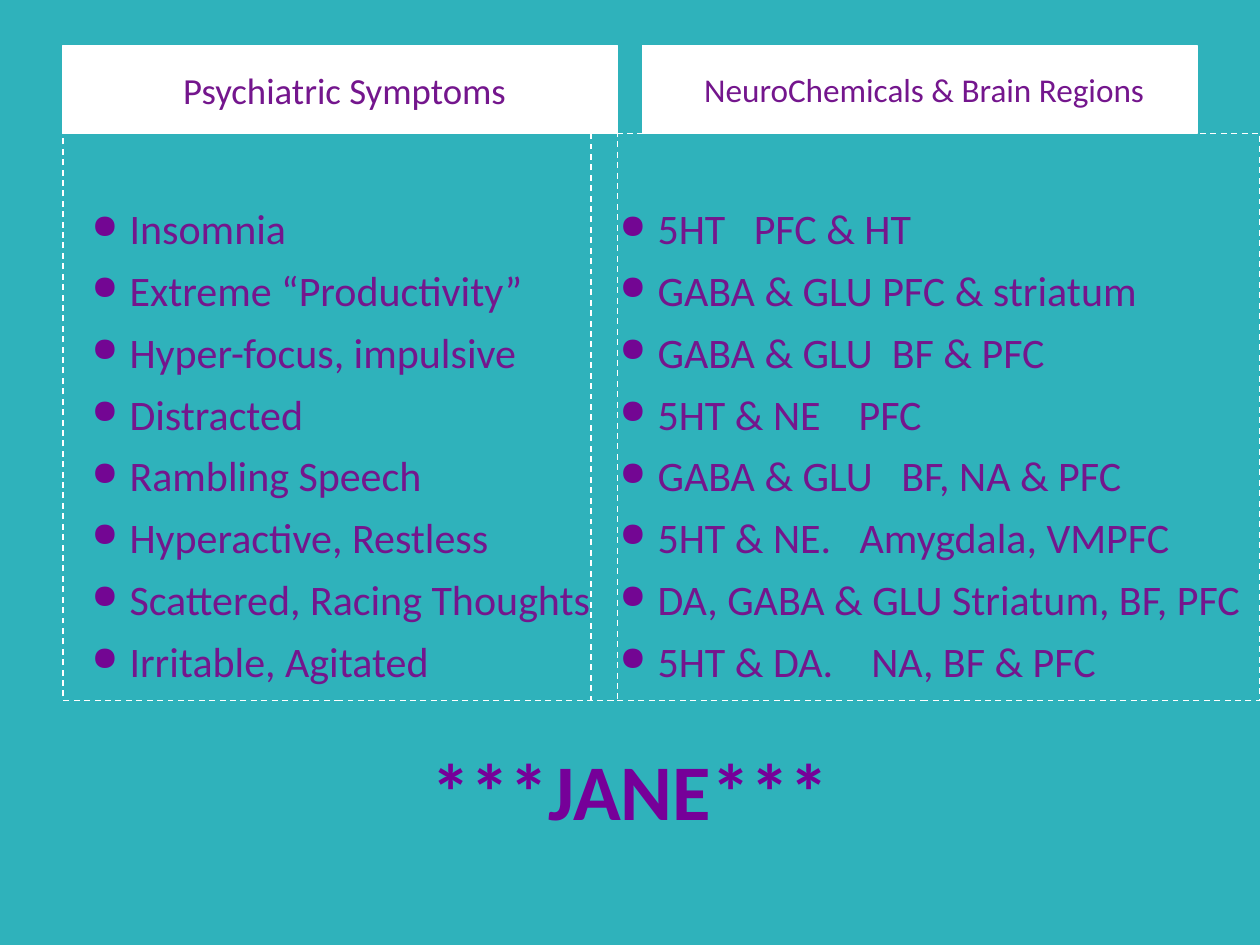
from typing import NamedTuple

import pptx
import pptx.dml.color
import pptx.enum.dml
import pptx.enum.shapes
import pptx.enum.text
import pptx.oxml
import pptx.oxml.ns
import pptx.util
from pptx.util import Inches

RGBColor = pptx.dml.color.RGBColor
Align = pptx.enum.text.PP_ALIGN
Anchor = pptx.enum.text.MSO_ANCHOR

TEAL = RGBColor(0x2F, 0xB2, 0xBB)
WHITE = RGBColor(0xFF, 0xFF, 0xFF)
PURPLE = RGBColor(0x74, 0x16, 0x8D)
TITLE_PURPLE = RGBColor(0x76, 0x00, 0x99)
BULLET_PURPLE = RGBColor(0x73, 0x06, 0x93)

FONT = "Calibri"
SPACE_WIDTH = 5.4  # one blank at 24 points
HEADING_TOP, HEADING_WIDTH, HEADING_HEIGHT = 0.36, 4.4, 0.7
LIST_TOP, LIST_HEIGHT = HEADING_TOP + HEADING_HEIGHT, 4.5


class Entry(NamedTuple):
    lead: str
    regions: str = ""
    gap: int = 1  # distance before the regions, in blanks


class Column(NamedTuple):
    heading: str
    heading_size: int
    heading_left: float
    list_left: float
    list_width: float
    entries: list[Entry]


COLUMNS = [
    Column("Psychiatric Symptoms", 21, 0.5, 0.5, 4.4, [
        Entry("Insomnia"),
        Entry("Extreme “Productivity”"),
        Entry("Hyper-focus, impulsive"),
        Entry("Distracted"),
        Entry("Rambling Speech"),
        Entry("Hyperactive, Restless"),
        Entry("Scattered, Racing Thoughts"),
        Entry("Irritable, Agitated"),
    ]),
    Column("NeuroChemicals & Brain Regions", 19, 5.1, 4.69, 5.31, [
        Entry("5HT", "PFC & HT", 3),
        Entry("GABA & GLU", "PFC & striatum"),
        Entry("GABA & GLU", "BF & PFC", 2),
        Entry("5HT & NE", "PFC", 4),
        Entry("GABA & GLU", "BF, NA & PFC", 3),
        Entry("5HT & NE.", "Amygdala, VMPFC", 3),
        Entry("DA, GABA & GLU", "Striatum, BF, PFC"),
        Entry("5HT & DA.", "NA, BF & PFC", 4),
    ]),
]


def write(paragraph, text: str, *, size: float = 24, color: RGBColor = PURPLE,
          bold: bool = False, spacing: float = 0) -> None:
    run = paragraph.add_run()
    run.text = text
    run.font.name = FONT
    run.font.size = pptx.util.Pt(size)
    run.font.color.rgb = color
    run.font.bold = bold
    if spacing:
        run.font._element.set("spc", str(round(spacing * 100)))


def indent(paragraph, left: float, first: float = 0) -> None:
    properties = paragraph._p.get_or_add_pPr()
    properties.set("marL", str(Inches(left)))
    properties.set("indent", str(Inches(first)))


def add_bullet(paragraph) -> None:
    namespace = pptx.oxml.ns.nsdecls("a")
    properties = paragraph._p.get_or_add_pPr()
    for element in (
        f'<a:buClr {namespace}><a:srgbClr val="{BULLET_PURPLE}"/></a:buClr>',
        f'<a:buSzPct {namespace} val="80000"/>',
        f'<a:buChar {namespace} char="●"/>',
    ):
        properties.append(pptx.oxml.parse_xml(element))


def add_box(slide, left: float, top: float, width: float, height: float):
    box = slide.shapes.add_shape(
        pptx.enum.shapes.MSO_SHAPE.RECTANGLE,
        Inches(left), Inches(top), Inches(width), Inches(height))
    box.shadow.inherit = False
    box.line.color.rgb = WHITE
    box.line.width = pptx.util.Pt(0.85)
    box.text_frame.word_wrap = True
    return box


def draw_heading(slide, column: Column) -> None:
    heading = add_box(slide, column.heading_left, HEADING_TOP,
                      HEADING_WIDTH, HEADING_HEIGHT)
    heading.fill.solid()
    heading.fill.fore_color.rgb = WHITE
    heading.text_frame.vertical_anchor = Anchor.MIDDLE
    paragraph = heading.text_frame.paragraphs[0]
    paragraph.alignment = Align.CENTER
    indent(paragraph, 0.07)
    write(paragraph, column.heading, size=column.heading_size)


def draw_list(slide, column: Column) -> None:
    panel = add_box(slide, column.list_left, LIST_TOP,
                    column.list_width, LIST_HEIGHT)
    panel.fill.background()
    panel.line.dash_style = pptx.enum.dml.MSO_LINE.DASH
    frame = panel.text_frame
    frame.vertical_anchor = Anchor.TOP
    frame.margin_top = Inches(0.55)
    for index, entry in enumerate(column.entries):
        paragraph = frame.add_paragraph() if index else frame.paragraphs[0]
        paragraph.alignment = Align.LEFT
        paragraph.space_before = pptx.util.Pt(6.5 if index else 0)
        indent(paragraph, 0.43, -0.3)
        add_bullet(paragraph)
        write(paragraph, entry.lead)
        if entry.regions:
            write(paragraph, " ", spacing=(entry.gap - 1) * SPACE_WIDTH)
            write(paragraph, entry.regions)


def draw_title(slide) -> None:
    title = slide.shapes.add_textbox(
        Inches(0.5), Inches(5.64), Inches(9), Inches(1.25))
    title.text_frame.word_wrap = True
    title.text_frame.vertical_anchor = Anchor.MIDDLE
    paragraph = title.text_frame.paragraphs[0]
    paragraph.alignment = Align.CENTER
    write(paragraph, "***JANE***", size=45, color=TITLE_PURPLE, bold=True)


def main() -> None:
    presentation = pptx.Presentation()
    presentation.slide_width = Inches(10)
    presentation.slide_height = Inches(7.5)
    slide = presentation.slides.add_slide(presentation.slide_layouts[6])
    slide.background.fill.solid()
    slide.background.fill.fore_color.rgb = TEAL

    # Case name below the columns
    draw_title(slide)

    # Headings, then the lists under them
    for column in COLUMNS:
        draw_heading(slide, column)
    for column in COLUMNS:
        draw_list(slide, column)

    presentation.save("out.pptx")


if __name__ == "__main__":
    main()
